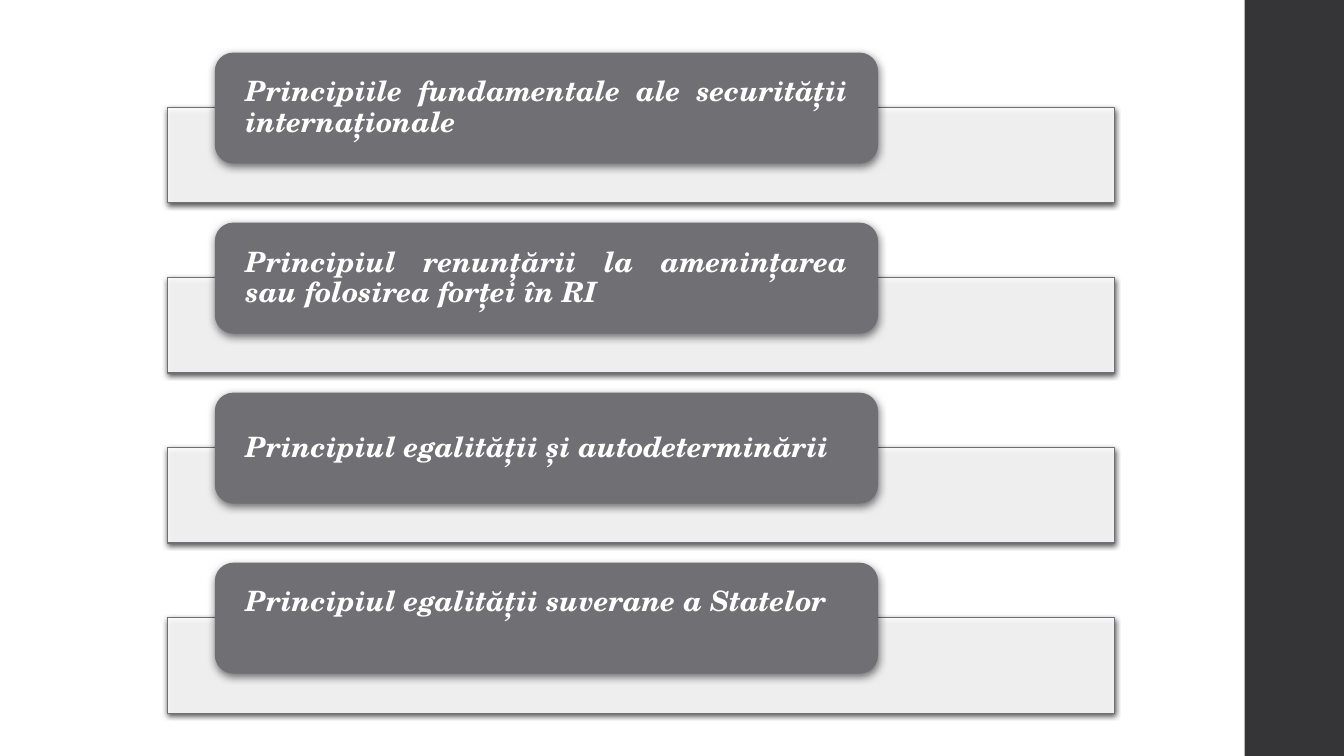
from lxml import etree
from pptx import Presentation
from pptx.dml.color import RGBColor
from pptx.enum import shapes, text
from pptx.oxml import ns
from pptx.util import Pt

COLORS = {
    "white": "FFFFFF",
    "black": "000000",
    "gray": "6F6F74",
    "band": "353537",
}
FONT = "TeX Gyre Schola"
PAGE_WIDTH, PAGE_HEIGHT = 960, 540
ROW_TOP, ROW_PITCH = 37.6, 121.45

# Each principle with the bottom inset of its label
PRINCIPLES = [
    ("Principiile fundamentale ale securității internaționale", 0),
    ("Principiul renunțării la amenințarea sau folosirea forței în RI", 0),
    ("Principiul egalității și autodeterminării", 0),
    ("Principiul egalității suverane a Statelor", 22),
]


def color(name):
    return RGBColor.from_string(COLORS[name])


def add_child(parent, tag, **attributes):
    return etree.SubElement(parent, ns.qn(tag), attributes)


def add_shadow(shape, opacity, blur, distance):
    """Cast a soft black shadow straight down."""
    effects = shape._element.spPr.find(ns.qn("a:effectLst"))
    shadow = add_child(effects, "a:outerShdw", blurRad=str(Pt(blur)),
                       dist=str(Pt(distance)), dir="5400000",
                       algn="ctr", rotWithShape="0")
    tint = add_child(shadow, "a:srgbClr", val=COLORS["black"])
    add_child(tint, "a:alpha", val=str(opacity * 1000))


def add_box(page, kind, left, top, width, height, fill):
    box = page.shapes.add_shape(kind, Pt(left), Pt(top), Pt(width), Pt(height))
    box.shadow.inherit = False
    box.fill.solid()
    box.fill.fore_color.rgb = color(fill)
    box.line.fill.background()
    return box


def add_side_band(page, left, top, width, height):
    add_box(page, shapes.MSO_SHAPE.RECTANGLE, left, top, width, height, "band")


def add_principle(page, left, top, width, wording, bottom_inset):
    # Pale bar, slightly see-through
    bar = add_box(page, shapes.MSO_SHAPE.RECTANGLE,
                  left, top + 39.4, width, 68, "white")
    tint = bar._element.spPr.find(ns.qn("a:solidFill"))[0]
    add_child(tint, "a:alpha", val="90000")
    bar.line.color.rgb = color("gray")
    bar.line.width = Pt(0.75)
    add_shadow(bar, 75, 4, 1.2)

    # Rounded label overlapping the bar
    label = add_box(page, shapes.MSO_SHAPE.ROUNDED_RECTANGLE,
                    left + width * 0.05, top, width * 0.7, 79.2, "gray")
    add_shadow(label, 55, 6, 2)

    # Wording of the principle
    frame = label.text_frame
    frame.word_wrap = True
    frame.vertical_anchor = text.MSO_ANCHOR.MIDDLE
    frame.margin_left = frame.margin_right = Pt(18)
    frame.margin_top, frame.margin_bottom = Pt(0), Pt(bottom_inset)
    para = frame.paragraphs[0]
    para.alignment = text.PP_ALIGN.JUSTIFY
    para.line_spacing = 0.9
    span = para.add_run()
    span.text = wording
    span.font.name = FONT
    span.font.size = Pt(20)
    span.font.bold = span.font.italic = True
    span.font.color.rgb = color("white")


def main():
    deck = Presentation()
    deck.slide_width, deck.slide_height = Pt(PAGE_WIDTH), Pt(PAGE_HEIGHT)
    page = deck.slides.add_slide(deck.slide_layouts[6])
    page.background.fill.solid()
    page.background.fill.fore_color.rgb = color("white")

    add_side_band(page, 889, 0, PAGE_WIDTH - 889, PAGE_HEIGHT)
    for row, (wording, bottom_inset) in enumerate(PRINCIPLES):
        add_principle(page, 119.6, ROW_TOP + row * ROW_PITCH, 676.8,
                      wording, bottom_inset)

    deck.save("out.pptx")


if __name__ == "__main__":
    main()
